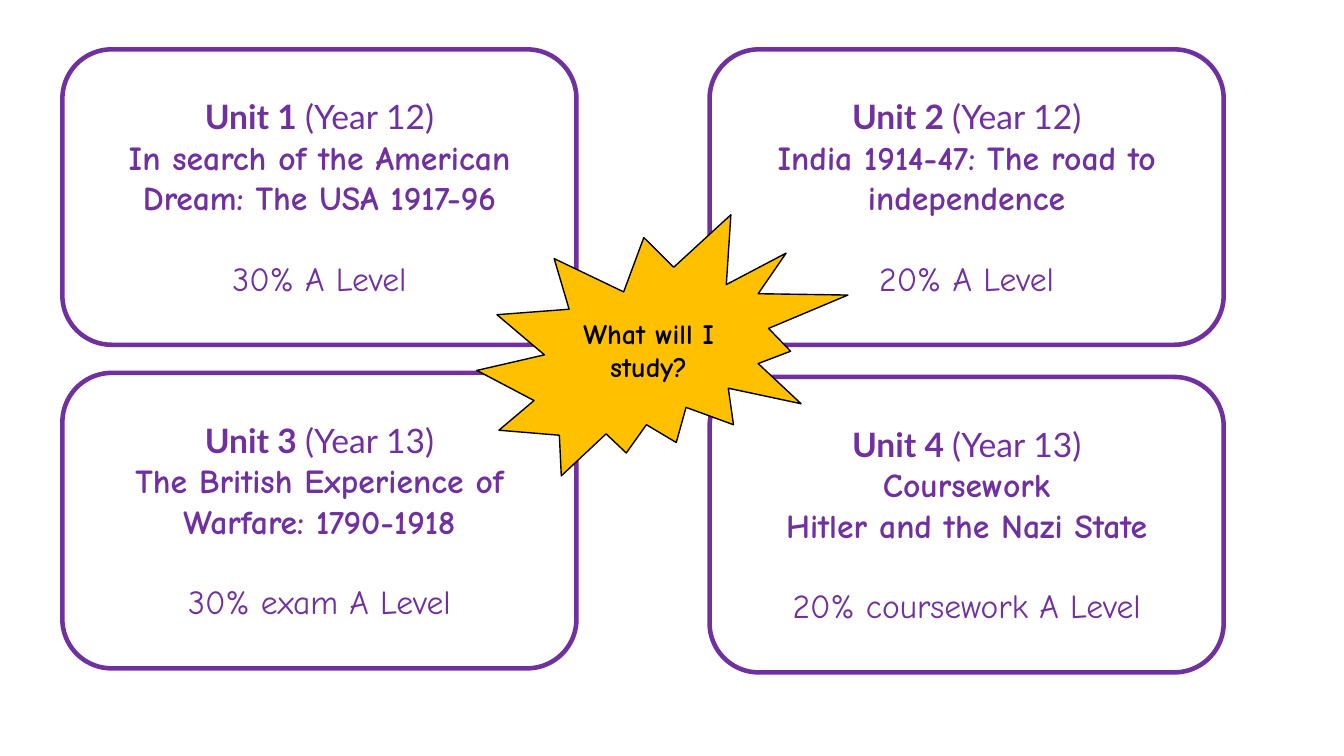
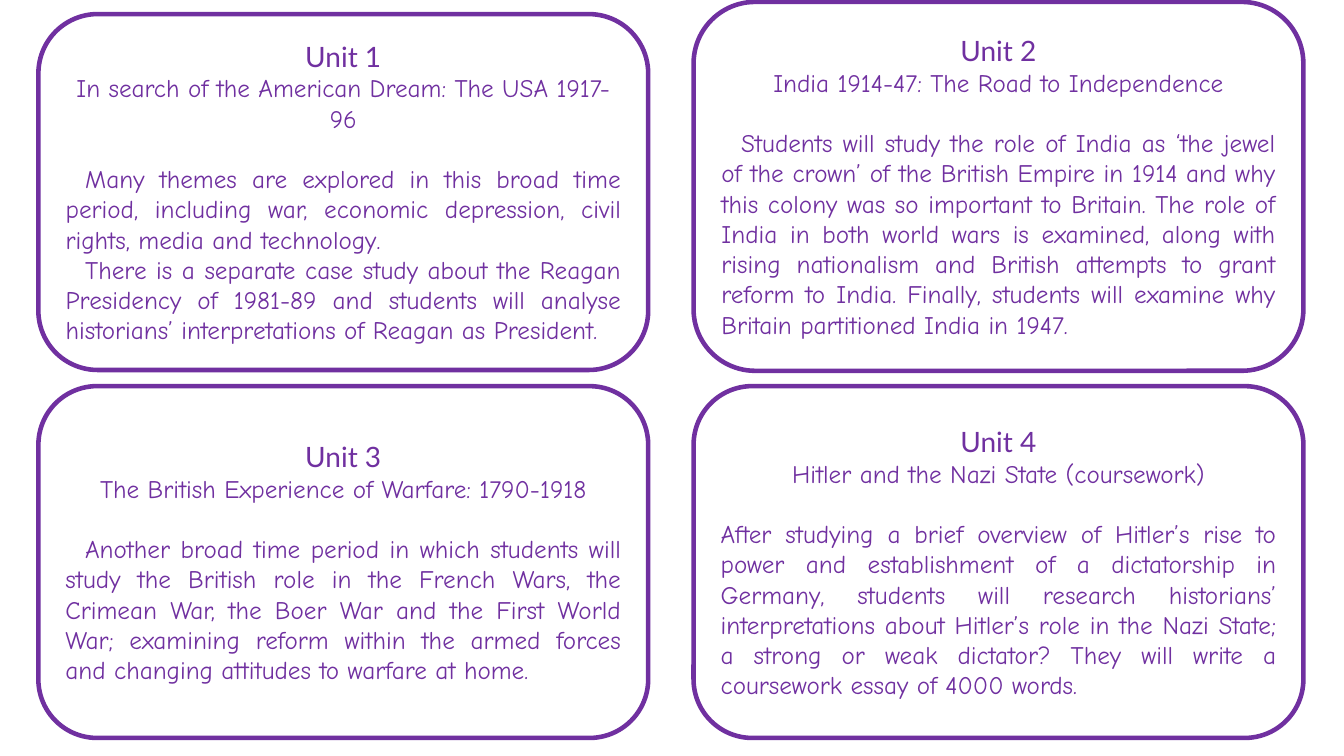
import pptx
import pptx.util
import pptx.dml.color
import pptx.enum.shapes
import pptx.enum.text

Pt = pptx.util.Pt
Shapes = pptx.enum.shapes.MSO_SHAPE
Align = pptx.enum.text.PP_ALIGN
Anchor = pptx.enum.text.MSO_ANCHOR

# Content
UNITS = [
    {"name": "Unit 1", "year": "(Year 12)",
     "topic": ["In search of the American Dream: The USA 1917-96"],
     "share": "30% A Level"},
    {"name": "Unit 2", "year": "(Year 12)",
     "topic": ["India 1914-47: The road to independence"],
     "share": "20% A Level"},
    {"name": "Unit 3", "year": "(Year 13)",
     "topic": ["The British Experience of Warfare: 1790-1918"],
     "share": "30% exam A Level"},
    {"name": "Unit 4", "year": "(Year 13)",
     "topic": ["Coursework", "Hitler and the Nazi State"],
     "share": "20% coursework A Level"},
]
QUESTION = "What will I study?"

DETAILS = [
    {"name": "Unit 1", "indented": True,
     "topic": "In search of the American Dream: The USA 1917-96",
     "summary": [
         "Many themes are explored in this broad time period, including war, "
         "economic depression, civil rights, media and technology.",
         "There is a separate case study about the Reagan Presidency of 1981-89 "
         "and students will analyse historians’ interpretations of Reagan as "
         "President."]},
    {"name": "Unit 2", "indented": True,
     "topic": "India 1914-47: The Road to Independence",
     "summary": [
         "Students will study the role of India as ‘the jewel of the crown’ of "
         "the British Empire in 1914 and why this colony was so important to "
         "Britain. The role of India in both world wars is examined, along with "
         "rising nationalism and British attempts to grant reform to India. "
         "Finally, students will examine why Britain partitioned India in 1947."]},
    {"name": "Unit 3", "indented": True,
     "topic": "The British Experience of Warfare: 1790-1918",
     "summary": [
         "Another broad time period in which students will study the British "
         "role in the French Wars, the Crimean War, the Boer War and the First "
         "World War; examining reform within the armed forces and changing "
         "attitudes to warfare at home."]},
    {"name": "Unit 4", "indented": False,
     "topic": "Hitler and the Nazi State (coursework)",
     "summary": [
         "After studying a brief overview of Hitler’s rise to power and "
         "establishment of a dictatorship in Germany, students will research "
         "historians’ interpretations about Hitler’s role in the Nazi State; a "
         "strong or weak dictator? They will write a coursework essay of 4000 "
         "words."]},
]

# Layout in points: columns are lefts, rows are (top, height) of each card
OVERVIEW = {"columns": (44.6, 506.9), "width": 367.2,
            "rows": [(35.3, 211), (35.3, 211), (266.4, 211), (269.3, 211)]}
DETAIL = {"columns": (27.4, 495.4), "width": 435.6,
          "rows": [(10.1, 254.2), (1.4, 263.5), (275.8, 251.3), (275.8, 251.3)]}
BURST = (340.6, 153.4, 265, 186.5)


class Theme:
    purple = pptx.dml.color.RGBColor.from_string("7030A0")
    gold = pptx.dml.color.RGBColor.from_string("FFC000")
    black = pptx.dml.color.RGBColor.from_string("000000")
    name_font, body_font = "Lato", "Comic Neue"
    overview_size, detail_name_size, detail_size, burst_size = 24, 20, 18, 20
    card_line, burst_line = 3.25, 1
    line_height = 1.2
    indent = 14


def line(*runs, align=Align.CENTER, gap=0, indent=0):
    """One paragraph; each run is (text, font, size, bold)."""
    return {"runs": runs, "align": align, "gap": gap, "indent": indent}


def add_panel(slide, preset, box, fill, outline, weight, ink, lines):
    panel = slide.shapes.add_shape(preset, *(Pt(length) for length in box))
    panel.shadow.inherit = False
    if fill is None:
        panel.fill.background()
    else:
        panel.fill.solid()
        panel.fill.fore_color.rgb = fill
    panel.line.color.rgb = outline
    panel.line.width = Pt(weight)
    frame = panel.text_frame
    frame.word_wrap = True
    frame.vertical_anchor = Anchor.MIDDLE
    for number, content in enumerate(lines):
        paragraph = frame.add_paragraph() if number else frame.paragraphs[0]
        paragraph.alignment = content["align"]
        paragraph.space_before = Pt(content["gap"])
        if content["indent"]:
            paragraph._p.get_or_add_pPr().set("indent", str(Pt(content["indent"])))
        for text, font, size, bold in content["runs"]:
            run = paragraph.add_run()
            run.text = text
            run.font.name = font
            run.font.size = Pt(size)
            run.font.bold = bold
            run.font.color.rgb = ink


def add_cards(slide, layout, cards):
    """Place four cards, two to a row."""
    for number, lines in enumerate(cards):
        top, height = layout["rows"][number]
        box = (layout["columns"][number % 2], top, layout["width"], height)
        add_panel(slide, Shapes.ROUNDED_RECTANGLE, box, None, Theme.purple,
                  Theme.card_line, Theme.purple, lines)


def overview_lines(unit):
    size = Theme.overview_size
    return [
        line((unit["name"] + " ", Theme.name_font, size, True),
             (unit["year"], Theme.name_font, size, False)),
        *(line((topic, Theme.body_font, size, True)) for topic in unit["topic"]),
        line((unit["share"], Theme.body_font, size, False),
             gap=size * Theme.line_height),
    ]


def detail_lines(unit):
    size = Theme.detail_size
    return [
        line((unit["name"], Theme.name_font, Theme.detail_name_size, False)),
        line((unit["topic"], Theme.body_font, size, False)),
        *(line((text, Theme.body_font, size, False), align=Align.JUSTIFY,
               gap=0 if number else size * Theme.line_height,
               indent=Theme.indent if unit["indented"] else 0)
          for number, text in enumerate(unit["summary"])),
    ]


def main():
    deck = pptx.Presentation()
    deck.slide_width, deck.slide_height = Pt(960), Pt(540)
    blank = deck.slide_layouts[6]

    # Overview of the four units
    overview = deck.slides.add_slide(blank)
    add_cards(overview, OVERVIEW, [overview_lines(unit) for unit in UNITS])
    add_panel(overview, Shapes.EXPLOSION2, BURST, Theme.gold, Theme.black,
              Theme.burst_line, Theme.black,
              [line((QUESTION, Theme.body_font, Theme.burst_size, True))])

    # What each unit covers
    detail = deck.slides.add_slide(blank)
    add_cards(detail, DETAIL, [detail_lines(unit) for unit in DETAILS])

    deck.save("out.pptx")


if __name__ == "__main__":
    main()
